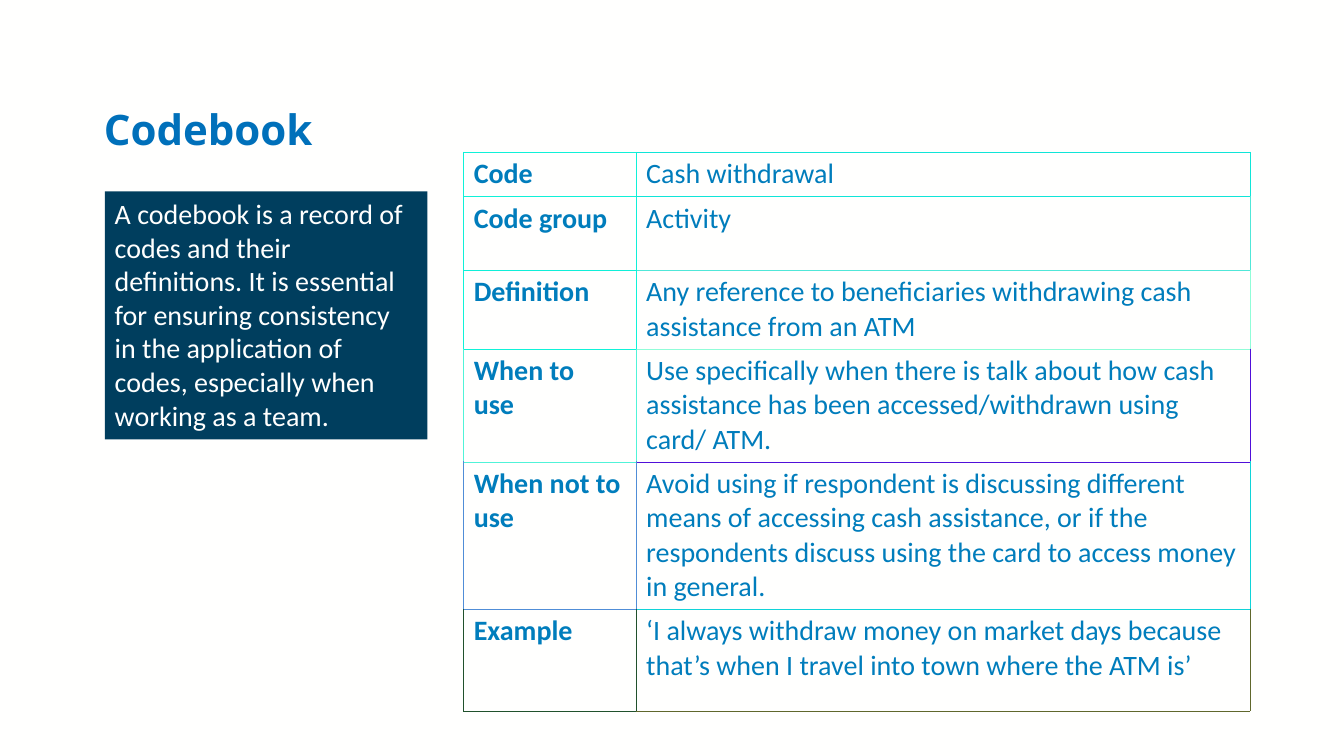
from lxml import etree
from pptx import Presentation
from pptx.dml.color import RGBColor
from pptx.enum.shapes import MSO_SHAPE
from pptx.enum.text import MSO_ANCHOR, PP_ALIGN
from pptx.oxml.ns import qn
from pptx.util import Inches, Pt

RECTANGLE = MSO_SHAPE.RECTANGLE
TOP, MIDDLE = MSO_ANCHOR.TOP, MSO_ANCHOR.MIDDLE
LEFT = PP_ALIGN.LEFT
TITLE_ONLY = 5
NO_BREAK_SPACE = chr(160)

CODEBOOK = [
    ("Code", "Cash withdrawal"),
    ("Code group", "Activity"),
    ("Definition", "Any reference to beneficiaries withdrawing cash assistance from an ATM"),
    ("When to use", "Use specifically when there is talk about how cash assistance has been "
                    "accessed/withdrawn using card/ ATM."),
    ("When not to use", "Avoid using if respondent is discussing different means of accessing "
                        "cash assistance, or if the respondents discuss using the card to "
                        "access money in general."),
    ("Example", "‘I always withdraw money on market days because that’s when I travel into "
                "town where the ATM is’"),
]
BORDERS = [
    ("10F1D8", "10E5D8"),
    ("10EFD8", "50E7D8"),
    ("10F2D8", "90FDD8"),
    ("50F3D8", "5010D9"),
    ("508DD7", "10D3D8"),
    ("20512C", "60672C"),
]
COLUMN_WIDTHS = [12.83, 45.69]
ROW_HEIGHTS = [5.87, 9.73, 9.73, 13.47, 17.33, 13.47]


def colour(value):
    return RGBColor.from_string(value)


class CodebookSlide:
    body_font = "Calibri"
    title_font = "Open Sans"
    body_size = 20
    title_size = 30
    paper = "FFFFFE"
    navy = "003E5E"
    title_blue = "0070BA"
    table_blue = "007DBC"
    border_width = 0.5

    def __init__(self, presentation):
        self.presentation = presentation
        self.slide = presentation.slides.add_slide(presentation.slide_layouts[TITLE_ONLY])
        background = self.slide.background.fill
        background.solid()
        background.fore_color.rgb = colour(self.paper)

    def across(self, percent):
        return round(self.presentation.slide_width * percent / 100)

    def down(self, percent):
        return round(self.presentation.slide_height * percent / 100)

    def area(self, left, top, width, height):
        return self.across(left), self.down(top), self.across(width), self.down(height)

    def set_text(self, text_frame, text, size, font_name, text_colour, bold=False):
        text_frame.word_wrap = True
        text_frame.text = text
        paragraph = text_frame.paragraphs[0]
        paragraph.alignment = LEFT
        paragraph.font.size = Pt(size)
        paragraph.font.name = font_name
        paragraph.font.bold = bold
        paragraph.font.color.rgb = colour(text_colour)
        return paragraph

    def title(self, text, *shares):
        shape = self.slide.shapes.title
        shape.left, shape.top, shape.width, shape.height = self.area(*shares)
        shape.text_frame.vertical_anchor = MIDDLE
        paragraph = self.set_text(shape.text_frame, text, self.title_size, self.title_font,
                                  self.title_blue, True)
        paragraph.line_spacing = 0.9

    def panel(self, text, *shares):
        shape = self.slide.shapes.add_shape(RECTANGLE, *self.area(*shares))
        shape.shadow.inherit = False
        shape.fill.solid()
        shape.fill.fore_color.rgb = colour(self.navy)
        shape.line.fill.background()
        shape.text_frame.vertical_anchor = TOP
        self.set_text(shape.text_frame, text, self.body_size, self.body_font, self.paper)

    def border(self, cell, side, line_colour):
        properties = cell._tc.get_or_add_tcPr()
        line = etree.SubElement(properties, qn(f"a:ln{side}"), w=str(Pt(self.border_width)))
        fill = etree.SubElement(line, qn("a:solidFill"))
        etree.SubElement(fill, qn("a:srgbClr"), val=line_colour)

    def table(self, rows, borders, left, top, widths, heights):
        frame = self.slide.shapes.add_table(
            len(rows), len(widths), *self.area(left, top, sum(widths), sum(heights)))
        table = frame.table
        table.first_row = table.horz_banding = False
        for column, width in zip(table.columns, widths):
            column.width = self.across(width)
        for row, height in zip(table.rows, heights):
            row.height = self.down(height)
        for row_index, texts in enumerate(rows):
            for column_index, text in enumerate(texts):
                cell = table.cell(row_index, column_index)
                own = borders[row_index][column_index]
                sides = {
                    "L": borders[row_index][max(column_index - 1, 0)],
                    "R": own,
                    "T": borders[max(row_index - 1, 0)][column_index],
                    "B": own,
                }
                for side, line_colour in sides.items():
                    self.border(cell, side, line_colour)
                cell.fill.background()
                self.set_text(cell.text_frame, text + NO_BREAK_SPACE, self.body_size,
                              self.body_font, self.table_blue, column_index == 0)


def main():
    presentation = Presentation()
    presentation.slide_width = Inches(13.33)
    presentation.slide_height = Inches(7.5)
    codebook = CodebookSlide(presentation)
    codebook.title("Codebook", 6.98, 9.07, 86.5, 16.8)
    codebook.table(CODEBOOK, BORDERS, 34.5, 20.13, COLUMN_WIDTHS, ROW_HEIGHTS)
    codebook.panel(
        "A codebook is a record of codes and their definitions. It is essential for ensuring "
        "consistency in the application of codes, especially when working as a team.",
        7.8, 25.33, 24, 32.8)
    presentation.save("out.pptx")


if __name__ == "__main__":
    main()
